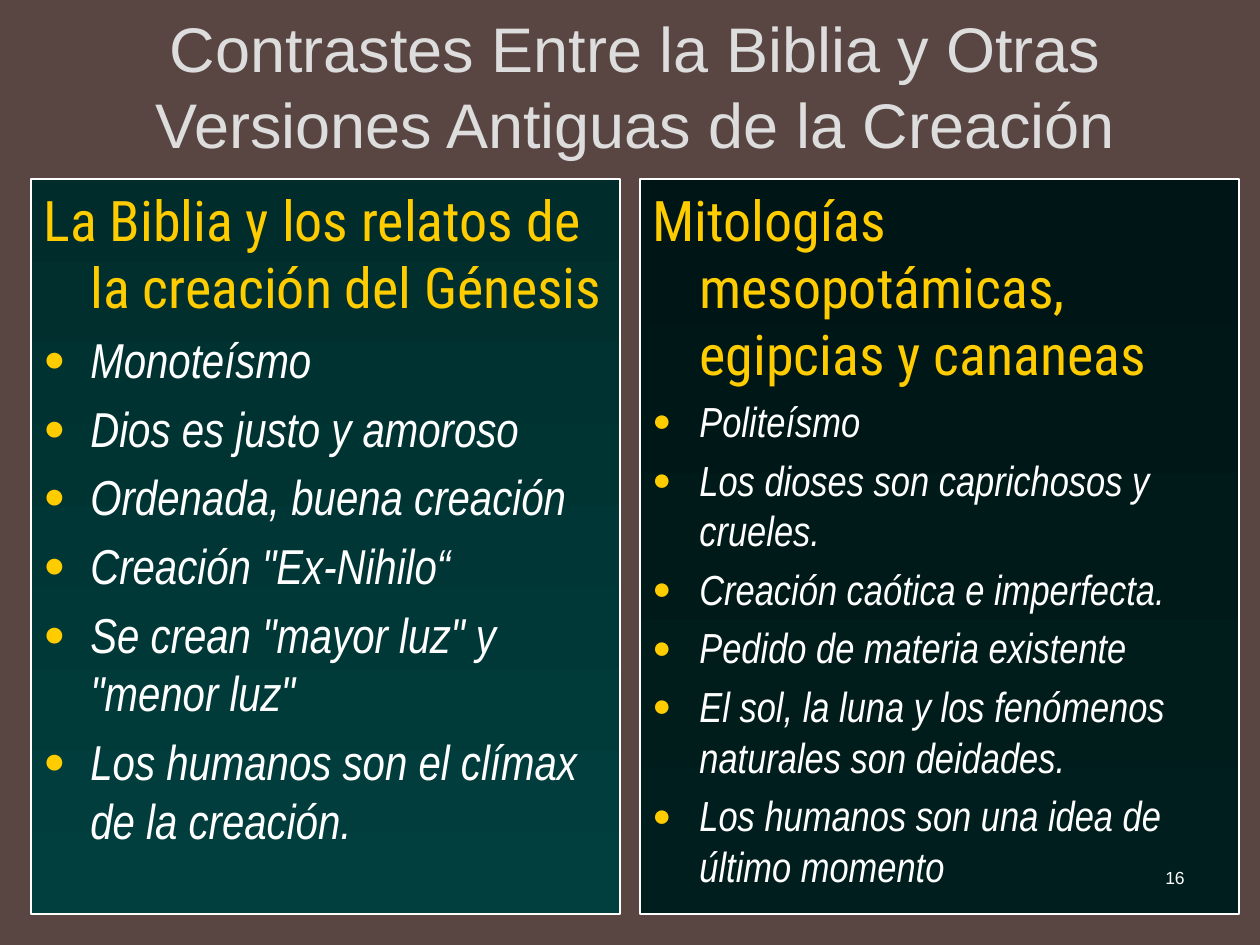
"""Build a slide contrasting the biblical creation account with ancient mythologies."""
from lxml import etree
from pptx import Presentation
from pptx.dml.color import RGBColor
from pptx.enum.shapes import MSO_SHAPE
from pptx.enum.text import MSO_ANCHOR, PP_ALIGN
from pptx.oxml.ns import qn
from pptx.util import Emu, Pt

RECTANGLE = MSO_SHAPE.RECTANGLE
TOP, MIDDLE = MSO_ANCHOR.TOP, MSO_ANCHOR.MIDDLE
LEFT, CENTER, RIGHT = PP_ALIGN.LEFT, PP_ALIGN.CENTER, PP_ALIGN.RIGHT
EMU_PER_PX = 914400 / 126
HANGING = 47
PANEL_TOP, PANEL_HEIGHT = 179, 735
BULLET = {"char": "●", "percent": 75}

COLORS = {
    "background": "594642",
    "title": "DDDDDD",
    "accent": "FFCC00",
    "white": "FFFFFF",
    "bible_top": "002D2C",
    "bible_bottom": "003F3E",
    "myths_top": "001515",
    "myths_bottom": "001E1D",
}

TITLE_FONT = {"name": "Arial", "size": Pt(36)}
HEADING_FONT = {"name": "Roboto Condensed", "size": Pt(32)}
POINT_FONT = {"name": "Arial Narrow", "italic": True}
NUMBER_FONT = {"name": "Arial", "size": Pt(10)}

PANELS = [
    {
        "left": 31, "width": 589, "size": 28,
        "shades": ("bible_top", "bible_bottom"),
        "heading": "La Biblia y los relatos de la creación del Génesis",
        "points": [
            "Monoteísmo",
            "Dios es justo y amoroso",
            "Ordenada, buena creación",
            "Creación \"Ex-Nihilo“",
            "Se crean \"mayor luz\" y \"menor luz\"",
            "Los humanos son el clímax de la creación.",
        ],
    },
    {
        "left": 640, "width": 599, "size": 24,
        "shades": ("myths_top", "myths_bottom"),
        "heading": "Mitologías mesopotámicas, egipcias y cananeas",
        "points": [
            "Politeísmo",
            "Los dioses son caprichosos y crueles.",
            "Creación caótica e imperfecta.",
            "Pedido de materia existente",
            "El sol, la luna y los fenómenos naturales son deidades.",
            "Los humanos son una idea de último momento",
        ],
    },
]


def px(length):
    """Turn pixels into EMU."""
    return Emu(round(length * EMU_PER_PX))


def rgb(role):
    """Return the colour for a role."""
    return RGBColor.from_string(COLORS[role])


def write(paragraph, text, font_format, color):
    """Add a formatted run to a paragraph."""
    run = paragraph.add_run()
    run.text = text
    for attribute, value in font_format.items():
        setattr(run.font, attribute, value)
    run.font.color.rgb = rgb(color)


def add_label(slide, box, text, font_format, color, align, anchor):
    """Add a text box with one paragraph."""
    frame = slide.shapes.add_textbox(*map(px, box)).text_frame
    frame.word_wrap = True
    frame.vertical_anchor = anchor
    frame.paragraphs[0].alignment = align
    write(frame.paragraphs[0], text, font_format, color)


def hang(paragraph, size):
    """Give a paragraph a hanging indent and proportional space before."""
    paragraph.alignment = LEFT
    paragraph.space_before = Pt(size * 0.2)
    properties = paragraph._p.get_or_add_pPr()
    properties.set("marL", str(px(HANGING)))
    properties.set("indent", str(-px(HANGING)))
    return properties


def add_bullet(properties):
    """Add the accent-coloured bullet to paragraph properties."""
    bullet_color = etree.SubElement(properties, qn("a:buClr"))
    etree.SubElement(bullet_color, qn("a:srgbClr"), val=COLORS["accent"])
    etree.SubElement(properties, qn("a:buSzPct"), val=str(BULLET["percent"] * 1000))
    etree.SubElement(properties, qn("a:buFont"), typeface="Arial")
    etree.SubElement(properties, qn("a:buChar"), char=BULLET["char"])


def shade(fill, roles):
    """Fill from top to bottom with two colours."""
    fill.gradient()
    fill.gradient_angle = 270
    for stop, role, position in zip(fill.gradient_stops, roles, (0, 1)):
        stop.color.rgb = rgb(role)
        stop.position = position


def add_panel(slide, panel):
    """Add a shaded panel with a heading and bulleted points."""
    box = (panel["left"], PANEL_TOP, panel["width"], PANEL_HEIGHT)
    rectangle = slide.shapes.add_shape(RECTANGLE, *map(px, box))
    rectangle.shadow.inherit = False
    shade(rectangle.fill, panel["shades"])
    rectangle.line.color.rgb = rgb("white")
    rectangle.line.width = Pt(1)
    frame = rectangle.text_frame
    frame.word_wrap = True
    frame.vertical_anchor = TOP
    heading = frame.paragraphs[0]
    hang(heading, HEADING_FONT["size"].pt)
    write(heading, panel["heading"], HEADING_FONT, "accent")
    point_font = {**POINT_FONT, "size": Pt(panel["size"])}
    for text in panel["points"]:
        point = frame.add_paragraph()
        add_bullet(hang(point, panel["size"]))
        write(point, text, point_font, "white")


def main():
    """Build and save the slide."""
    presentation = Presentation()
    presentation.slide_width, presentation.slide_height = px(1260), px(945)
    slide = presentation.slides.add_slide(presentation.slide_layouts[6])
    slide.background.fill.solid()
    slide.background.fill.fore_color.rgb = rgb("background")
    add_label(slide, (53, 10, 1165, 151),
              "Contrastes Entre la Biblia y Otras Versiones Antiguas de la Creación",
              TITLE_FONT, "title", CENTER, MIDDLE)
    for panel in PANELS:
        add_panel(slide, panel)
    add_label(slide, (903, 861, 294, 63), "16", NUMBER_FONT, "white", RIGHT, TOP)
    presentation.save("out.pptx")


if __name__ == "__main__":
    main()
